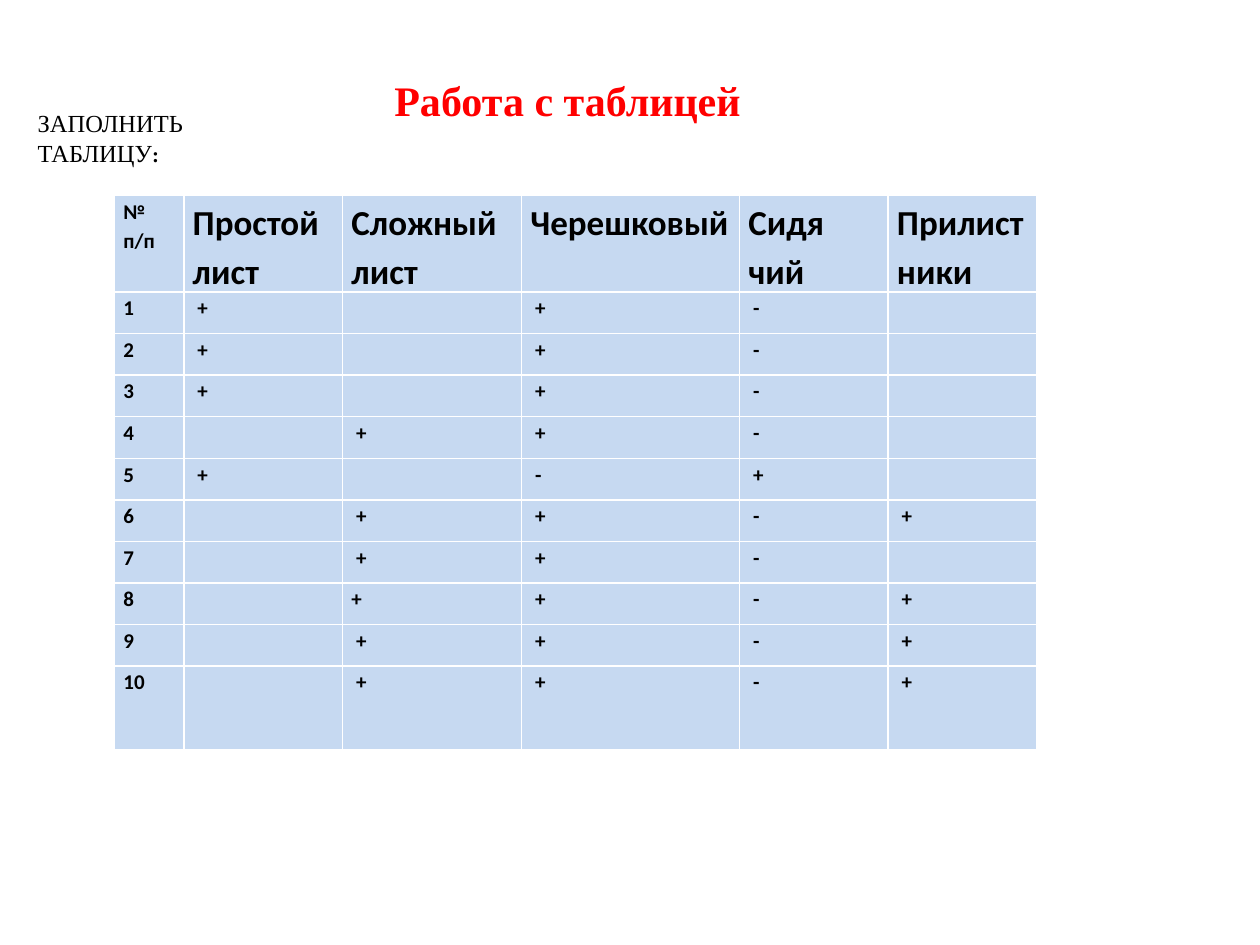
from pptx import Presentation
from pptx.dml.color import RGBColor
from pptx.enum.text import MSO_ANCHOR as Anchor, PP_ALIGN as Align
from pptx.util import Inches, Pt

COLORS = {"title": "FF0000", "text": "000000", "cell": "C6D9F1"}
SERIF, SANS = "Times New Roman", "Calibri"
NBSP = chr(160)

HEADERS = ["№ п/п", "Простой лист", "Сложный лист", "Черешковый",
           "Сидя\nчий", "Прилистники"]
# One string per plant, one sign per leaf feature; a dot is an empty cell.
MARKS = ["+.+-.", "+.+-.", "+.+-.", ".++-.", "+.-+.",
         ".++-+", ".++-.", ".++-+", ".++-+", ".++-+"]
TRAILING_GAP = (8, 2)  # the one sign that stands before its gap
COLUMN_WIDTHS = [0.55, 1.26, 1.42, 1.73, 1.18, 1.18]
ROW_HEIGHTS = [0.71] + [0.33] * 9 + [0.66]


class LeafSlide:
    def __init__(self, slide):
        self.slide = slide

    def style(self, font, size, color="text", face=SANS, bold=False):
        font.name, font.size, font.bold = face, Pt(size), bold
        font.color.rgb = RGBColor.from_string(COLORS[color])

    def title(self, text, left, top, width, height):
        title = self.slide.shapes.title
        title.left, title.top = Inches(left), Inches(top)
        title.width, title.height = Inches(width), Inches(height)
        frame = title.text_frame
        frame.text = text
        frame.vertical_anchor = Anchor.TOP
        heading = frame.paragraphs[0]
        heading.alignment = Align.LEFT
        self.style(heading.font, 24, "title", SERIF, True)

    def task(self, text, ending, left, top, width, height):
        """Add the instruction, closed by a smaller bold ending."""
        box = self.slide.shapes.add_textbox(
            Inches(left), Inches(top), Inches(width), Inches(height))
        box.text_frame.word_wrap = True
        line = box.text_frame.paragraphs[0]
        for part, size, bold in ((text, 14, False), (ending, 12, True)):
            run = line.add_run()
            run.text = part
            self.style(run.font, size, face=SERIF, bold=bold)

    def cell(self, cell, text, size):
        cell.fill.solid()
        cell.fill.fore_color.rgb = RGBColor.from_string(COLORS["cell"])
        cell.margin_left = cell.margin_right = Inches(0.07)
        cell.margin_top = cell.margin_bottom = 0
        cell.text = text
        for paragraph in cell.text_frame.paragraphs:
            paragraph.line_spacing = 1.15
            self.style(paragraph.font, size, bold=True)

    def table(self, rows, left, top):
        table = self.slide.shapes.add_table(
            len(rows), len(COLUMN_WIDTHS), Inches(left), Inches(top),
            Inches(sum(COLUMN_WIDTHS)), Inches(sum(ROW_HEIGHTS))).table
        for column, width in zip(table.columns, COLUMN_WIDTHS):
            column.width = Inches(width)
        for row, height in zip(table.rows, ROW_HEIGHTS):
            row.height = Inches(height)
        for r, texts in enumerate(rows):
            for c, text in enumerate(texts):
                self.cell(table.cell(r, c), text, 20 if r == 0 and c else 12)


def mark_text(mark, position):
    if mark == ".":
        return ""
    return mark + NBSP if position == TRAILING_GAP else NBSP + mark


def main():
    deck = Presentation()
    deck.slide_width, deck.slide_height = Inches(10), Inches(7.5)
    page = LeafSlide(deck.slides.add_slide(deck.slide_layouts[5]))
    page.title("Работа с таблицей", 3.03, 0.54, 4.41, 0.5)
    page.task("ЗАПОЛНИТЬ ТАБЛИЦУ", ":", 0.2, 0.81, 2.36, 0.88)
    plants = [[str(number)] + [mark_text(mark, (number, column))
                               for column, mark in enumerate(marks, 1)]
              for number, marks in enumerate(MARKS, 1)]
    page.table([HEADERS] + plants, 0.91, 1.55)
    deck.save("out.pptx")


if __name__ == "__main__":
    main()
